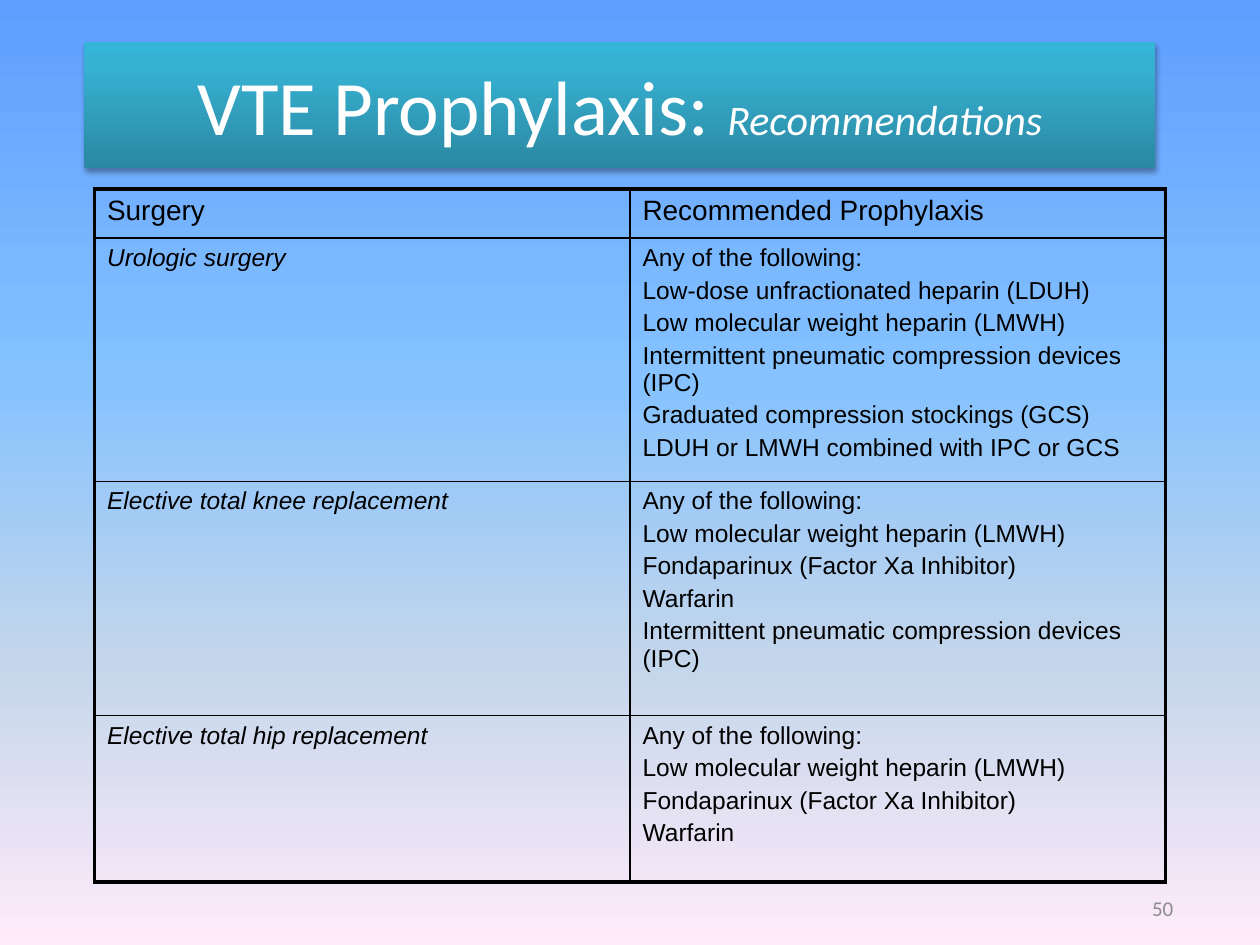
import pptx
import pptx.dml.color
import pptx.enum.text
import pptx.oxml
import pptx.oxml.ns
import pptx.util

Inches, Pt = pptx.util.Inches, pptx.util.Pt
ALIGN = pptx.enum.text.PP_ALIGN
A_NS = pptx.oxml.ns.nsdecls("a")

LMWH = "Low molecular weight heparin (LMWH)"
IPC = "Intermittent pneumatic compression devices (IPC)"
INTRO = "Any of the following:"
FACTOR_XA = "Fondaparinux (Factor Xa Inhibitor)"

# Surgery, recommended options, row height in inches
RECOMMENDATIONS = [
    ("Urologic surgery",
     [INTRO, "Low-dose unfractionated heparin (LDUH)", LMWH, IPC,
      "Graduated compression stockings (GCS)",
      "LDUH or LMWH combined with IPC or GCS"], 1.93),
    ("Elective total knee replacement",
     [INTRO, LMWH, FACTOR_XA, "Warfarin", IPC], 1.86),
    ("Elective total hip replacement",
     [INTRO, LMWH, FACTOR_XA, "Warfarin"], 1.32),
]


def color(hex_value):
    return pptx.dml.color.RGBColor.from_string(hex_value)


class SlideBuilder:
    heading_font = "Calibri"
    table_font = "Arial"
    ink = "000000"
    outer_line, inner_line = 2.25, 1

    def __init__(self, slide):
        self.slide = slide

    def run(self, paragraph, text, size, font, hex_value, italic=False):
        run = paragraph.add_run()
        run.text = text
        run.font.size = Pt(size)
        run.font.name = font
        run.font.italic = italic
        run.font.color.rgb = color(hex_value)

    def gradient(self, fill, owner, stops, angle):
        """Give a fill any number of stops, with a clockwise angle."""
        fill.gradient()
        old = owner.find(".//" + pptx.oxml.ns.qn("a:gradFill"))
        stop_xml = "".join(
            f'<a:gs pos="{position * 1000}"><a:srgbClr val="{hex_value}"/></a:gs>'
            for position, hex_value in stops)
        new = pptx.oxml.parse_xml(
            f'<a:gradFill {A_NS} rotWithShape="1"><a:gsLst>{stop_xml}</a:gsLst>'
            f'<a:lin ang="{angle * 60000}" scaled="0"/></a:gradFill>')
        old.getparent().replace(old, new)

    def background(self, stops):
        self.gradient(self.slide.background.fill, self.slide.element, stops, 90)

    def title(self, main, detail, left, top, width, height):
        banner = self.slide.shapes.title
        banner.left, banner.top = Inches(left), Inches(top)
        banner.width, banner.height = Inches(width), Inches(height)
        self.gradient(banner.fill, banner.element,
                      [(0, "2A88A2"), (80, "37B1D2"), (100, "34B4D6")], 270)
        banner.element.spPr.append(pptx.oxml.parse_xml(
            f'<a:effectLst {A_NS}><a:outerShdw blurRad="{Pt(3.1)}" dist="{Pt(1.8)}" '
            f'dir="5400000" rotWithShape="0"><a:srgbClr val="{self.ink}">'
            '<a:alpha val="35000"/></a:srgbClr></a:outerShdw></a:effectLst>'))
        frame = banner.text_frame
        frame.auto_size = pptx.enum.text.MSO_AUTO_SIZE.NONE
        frame.vertical_anchor = pptx.enum.text.MSO_ANCHOR.MIDDLE
        heading = frame.paragraphs[0]
        heading.alignment = ALIGN.CENTER
        self.run(heading, main, 44, self.heading_font, "FFFFFF")
        self.run(heading, detail, 24, self.heading_font, "FFFFFF", italic=True)

    def borders(self, cell, widths):
        properties = cell._tc.get_or_add_tcPr()
        for index, (side, width) in enumerate(zip("LRTB", widths)):
            properties.insert(index, pptx.oxml.parse_xml(
                f'<a:ln{side} {A_NS} w="{Pt(width)}"><a:solidFill>'
                f'<a:srgbClr val="{self.ink}"/></a:solidFill></a:ln{side}>'))

    def cell(self, cell, lines, size, italic):
        cell.fill.background()
        frame = cell.text_frame
        for index, line in enumerate(lines):
            paragraph = frame.add_paragraph() if index else frame.paragraphs[0]
            paragraph.space_before = Pt(0.2 * size)
            self.run(paragraph, line, size, self.table_font, self.ink, italic)

    def table(self, rows, left, top, width):
        """Each row is (cell lines, height, text size, first column italic)."""
        columns = len(rows[0][0])
        height = sum(row[1] for row in rows)
        table = self.slide.shapes.add_table(
            len(rows), columns, Inches(left), Inches(top),
            Inches(width), Inches(height)).table
        table.first_row = table.horz_banding = False
        for r, (cells, row_height, size, italic) in enumerate(rows):
            table.rows[r].height = Inches(row_height)
            for c, lines in enumerate(cells):
                cell = table.cell(r, c)
                self.cell(cell, lines, size, italic and c == 0)
                on_edge = (c == 0, c == columns - 1, r == 0, r == len(rows) - 1)
                self.borders(cell, [self.outer_line if edge else self.inner_line
                                    for edge in on_edge])

    def page_number(self, number, left, top, width, height):
        box = self.slide.shapes.add_textbox(
            Inches(left), Inches(top), Inches(width), Inches(height))
        frame = box.text_frame
        frame.word_wrap = True
        frame.vertical_anchor = pptx.enum.text.MSO_ANCHOR.MIDDLE
        frame.paragraphs[0].alignment = ALIGN.RIGHT
        self.run(frame.paragraphs[0], number, 12, self.heading_font, "8C8C8C")


def main():
    deck = pptx.Presentation()
    deck.slide_width, deck.slide_height = Inches(10), Inches(7.5)
    builder = SlideBuilder(deck.slides.add_slide(deck.slide_layouts[5]))

    # Backdrop and heading
    builder.background([(0, "5E9EFF"), (40, "85C2FF"), (70, "C4D6EB"), (100, "FFEBFA")])
    builder.page_number("50", 4.83, 7.08, 4.58, 0.25)
    builder.title("VTE Prophylaxis: ", "Recommendations", 0.67, 0.33, 8.5, 1)

    # Recommendations by type of surgery
    header = ([["Surgery"], ["Recommended Prophylaxis"]], 0.39, 16, False)
    body = [([[surgery], options], height, 14, True)
            for surgery, options, height in RECOMMENDATIONS]
    builder.table([header] + body, 0.75, 1.5, 8.5)

    deck.save("out.pptx")


if __name__ == "__main__":
    main()
